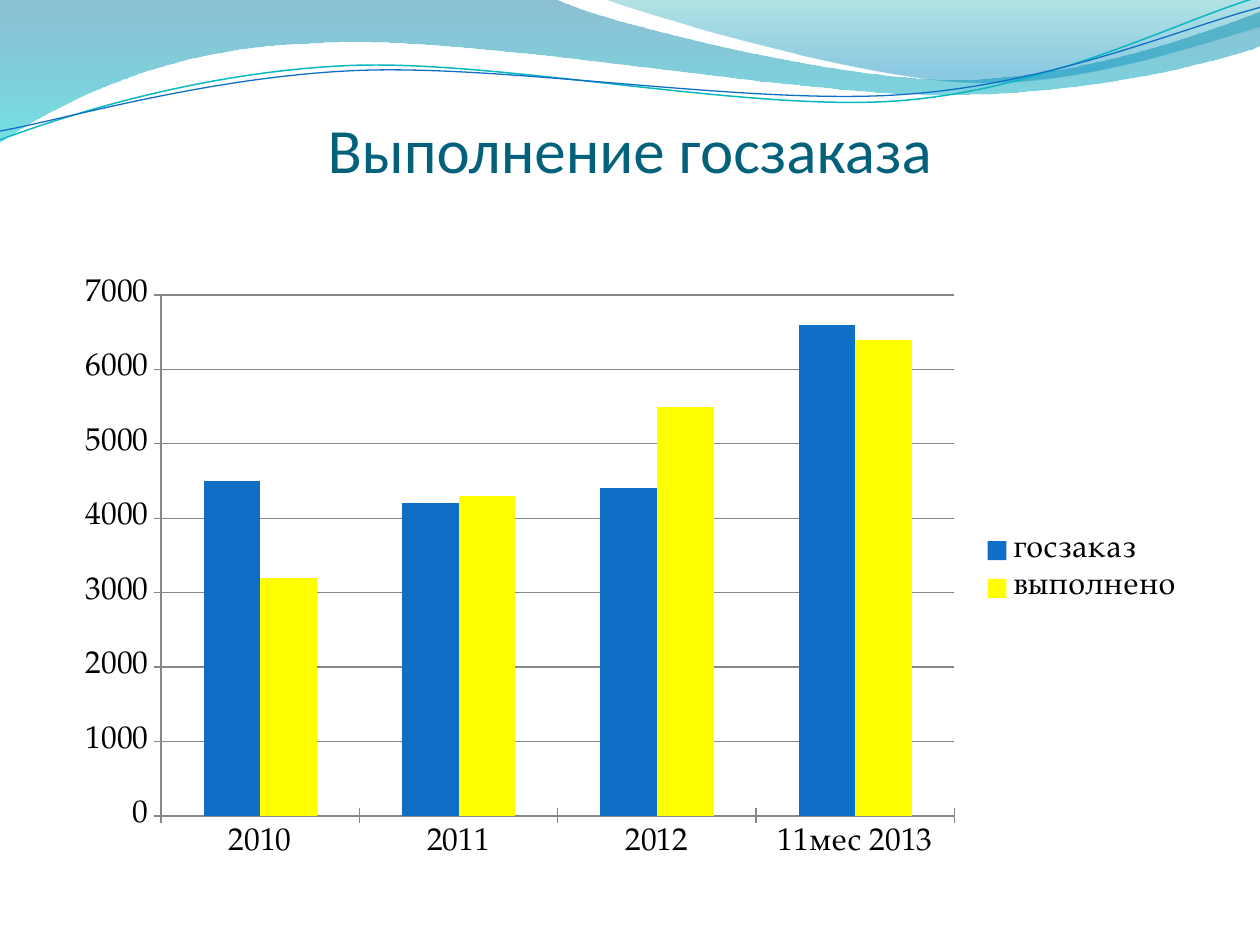
import math

from lxml import etree
from pptx import Presentation
from pptx.chart.data import CategoryChartData
from pptx.dml.color import RGBColor
from pptx.enum.chart import XL_CHART_TYPE, XL_LEGEND_POSITION, XL_TICK_MARK
from pptx.enum.text import MSO_ANCHOR, PP_ALIGN
from pptx.oxml.ns import qn
from pptx.util import Inches, Pt

COLUMNS = XL_CHART_TYPE.COLUMN_CLUSTERED
LEGEND_RIGHT = XL_LEGEND_POSITION.RIGHT
TICK_CROSS = XL_TICK_MARK.CROSS
BOTTOM = MSO_ANCHOR.BOTTOM
CENTER = PP_ALIGN.CENTER

BLACK = RGBColor(0x00, 0x00, 0x00)
TITLE_TEAL = RGBColor(0x04, 0x61, 0x7B)
BLUE = RGBColor(0x0F, 0x6F, 0xC6)
YELLOW = RGBColor(0xFF, 0xFF, 0x00)
AQUA = RGBColor(0x0A, 0xB8, 0xBF)
DEEP_BLUE = RGBColor(0x00, 0x74, 0xA1)
TURQUOISE = RGBColor(0x00, 0xC6, 0xCF)
SEA_GREEN = RGBColor(0x00, 0xA1, 0xA9)
SKY_BLUE = RGBColor(0x00, 0x8B, 0xBF)

TITLE = "Выполнение госзаказа"
CATEGORIES = ["2010", "2011", "2012", "11мес 2013"]
SERIES = [
    ("госзаказ", [4500, 4200, 4400, 6600], BLUE),
    ("выполнено", [3200, 4300, 5500, 6400], YELLOW),
]

# Outlines in inches: a pair is a straight step, six numbers are a Bezier curve.
# Gradient stops: position, colour, opacity in percent.
BANDS = [
    {
        "outline": [
            (0, 0), (4.4, -0.01),
            (4.76, 0.17, 6.64, 0.63, 7.58, 0.63), (8.53, 0.63, 9.58, 0.26, 10, 0.09),
            (10.01, 0.36),
            (9.83, 0.44, 8.7, 0.76, 7.46, 0.75), (6.22, 0.75, 3.82, 0.28, 2.57, 0.34),
            (1.29, 0.36, 0.46, 0.83, -0.01, 1.13),
        ],
        "stops": [(0, DEEP_BLUE, 45), (1, TURQUOISE, 55)],
    },
    {
        "outline": [
            (4.79, -0.01),
            (5.09, 0.11, 6.82, 0.62, 7.69, 0.65), (8.56, 0.69, 9.61, 0.32, 10, 0.21),
            (10, 0),
        ],
        "stops": [(0, SEA_GREEN, 30), (0.8, SKY_BLUE, 45)],
    },
]
WAVES = [
    {
        "outline": [
            (0, 1.11),
            (0.48, 0.93, 1.58, 0.57, 2.77, 0.52), (3.95, 0.47, 5.93, 0.89, 7.13, 0.8),
            (8.33, 0.71, 9.38, 0.15, 9.98, -0.02),
        ],
        "center": (4.99, 0.58), "color": AQUA, "width": 0.85,
    },
    {
        "outline": [
            (0, 1.04),
            (0.47, 0.96, 1.64, 0.61, 2.83, 0.56), (4.03, 0.51, 5.97, 0.84, 7.17, 0.75),
            (8.36, 0.67, 9.41, 0.21, 10, 0.06),
        ],
        "center": (5, 0.59), "color": BLUE, "width": 0.75,
    },
]
WAVE_TILT = 2.7  # degrees, counterclockwise


def turn(outline, center, degrees):
    """Turn every point of an outline clockwise about a center."""
    cosine, sine = math.cos(math.radians(degrees)), math.sin(math.radians(degrees))
    turned = []
    for step in outline:
        numbers = []
        for x, y in zip(step[::2], step[1::2]):
            across, down = x - center[0], y - center[1]
            numbers += [center[0] + across * cosine - down * sine,
                        center[1] + across * sine + down * cosine]
        turned.append(tuple(numbers))
    return turned


def add_outline(slide, outline, close):
    """Add a freeform, joining the three points of each curve into a Bezier step."""
    points = [
        (Inches(x), Inches(y))
        for step in outline for x, y in zip(step[::2], step[1::2])
    ]
    builder = slide.shapes.build_freeform(*points[0])
    builder.add_line_segments(points[1:], close=close)
    shape = builder.convert_to_shape()
    shape.shadow.inherit = False
    segments = iter(list(shape._element.iter(qn("a:lnTo"))))
    for step in outline[1:]:
        first = next(segments)
        if len(step) == 6:
            first.tag = qn("a:cubicBezTo")
            for _ in range(2):
                segment = next(segments)
                first.append(segment[0])
                segment.getparent().remove(segment)
    return shape


def add_band(slide, outline, stops):
    shape = add_outline(slide, outline, close=True)
    shape.line.fill.background()
    shape.fill.gradient()
    shape.fill.gradient_angle = 270
    for stop, (position, color, _) in zip(shape.fill.gradient_stops, stops):
        stop.position = position
        stop.color.rgb = color
    colors = list(shape._element.spPr.iter(qn("a:srgbClr")))
    for element, (_, _, opacity) in zip(colors, stops):
        etree.SubElement(element, qn("a:alpha"), val=str(opacity * 1000))


def add_wave(slide, outline, center, color, width):
    shape = add_outline(slide, turn(outline, center, WAVE_TILT), close=False)
    shape.rotation = 360 - WAVE_TILT
    shape.fill.background()
    shape.line.color.rgb = color
    shape.line.width = Pt(width)


def format_title(slide):
    title = slide.shapes.title
    title.left, title.top = Inches(1.72), Inches(0.77)
    title.width, title.height = Inches(6.56), Inches(0.71)
    frame = title.text_frame
    frame.text = TITLE
    frame_format = {
        "vertical_anchor": BOTTOM, "margin_left": 0, "margin_right": 0,
        "margin_top": Inches(0.05), "margin_bottom": 0, "word_wrap": True,
    }
    for name, value in frame_format.items():
        setattr(frame, name, value)
    paragraph = frame.paragraphs[0]
    paragraph.alignment = CENTER
    font = paragraph.runs[0].font
    font.name, font.size = "Calibri", Pt(36)
    font.color.rgb = TITLE_TEAL
    # The title lies in front of the waves.
    slide.shapes._spTree.append(title._element)


def add_order_chart(slide):
    data = CategoryChartData()
    data.categories = CATEGORIES
    for name, values, _ in SERIES:
        data.add_series(name, values)
    chart = slide.shapes.add_chart(
        COLUMNS, Inches(0.5), Inches(2.12), Inches(9), Inches(4.8), data
    ).chart
    chart.has_title = False
    chart.font.name, chart.font.size = "TeX Gyre Pagella", Pt(18)
    chart.font.color.rgb = BLACK
    chart.has_legend = True
    chart.legend.position = LEGEND_RIGHT
    chart.legend.include_in_layout = False

    plot = chart.plots[0]
    plot.gap_width, plot.overlap = 150, 0
    plot.vary_by_categories = False
    for series, (_, _, color) in zip(plot.series, SERIES):
        series.format.fill.solid()
        series.format.fill.fore_color.rgb = color
    chart.value_axis.has_major_gridlines = True
    for axis in (chart.category_axis, chart.value_axis):
        axis.major_tick_mark = TICK_CROSS


def main():
    presentation = Presentation()
    presentation.slide_width, presentation.slide_height = Inches(10), Inches(7.5)
    slide = presentation.slides.add_slide(presentation.slide_layouts[5])
    for band in BANDS:
        add_band(slide, **band)
    for wave in WAVES:
        add_wave(slide, **wave)
    format_title(slide)
    add_order_chart(slide)
    presentation.save("out.pptx")


if __name__ == "__main__":
    main()
